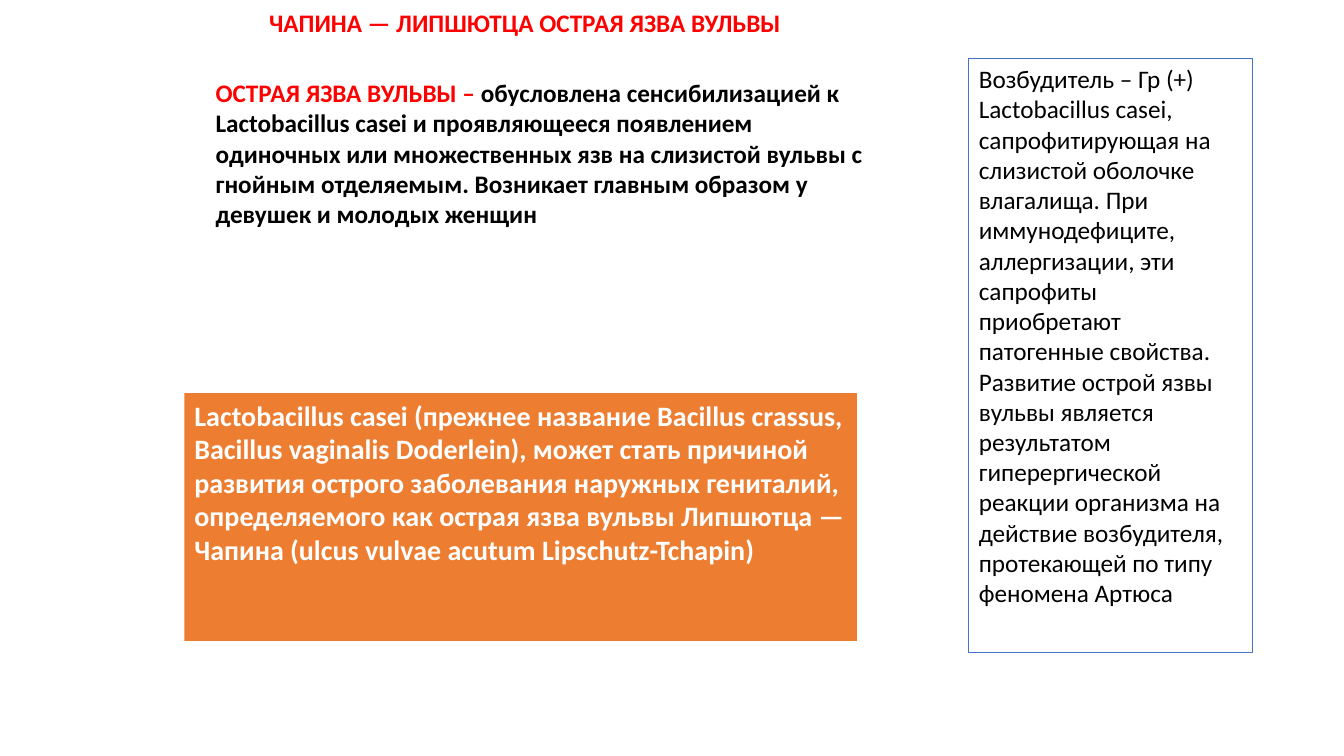
from dataclasses import dataclass

from pptx import Presentation
from pptx.dml.color import RGBColor
from pptx.enum import shapes, text
from pptx.util import Inches, Pt


@dataclass(frozen=True)
class Theme:
    font: str = "Calibri"
    body_size: int = 18
    callout_size: int = 20
    accent: str = "FF0000"
    dark: str = "000000"
    light: str = "FFFFFF"
    callout_fill: str = "ED7D31"
    border: str = "4472C4"
    border_width: float = 0.75


THEME = Theme()


def add_text(paragraph, content, size=THEME.body_size, color=THEME.dark, bold=False):
    run = paragraph.add_run()
    run.text = content
    run.font.name = THEME.font
    run.font.size = Pt(size)
    run.font.bold = bold
    run.font.color.rgb = RGBColor.from_string(color)


def start_text(shape):
    frame = shape.text_frame
    frame.word_wrap = True
    frame.auto_size = text.MSO_AUTO_SIZE.NONE
    frame.vertical_anchor = text.MSO_ANCHOR.TOP
    paragraph = frame.paragraphs[0]
    paragraph.alignment = text.PP_ALIGN.LEFT
    return paragraph


def add_text_area(slide, box):
    return start_text(slide.shapes.add_textbox(*map(Inches, box)))


def add_panel(slide, box, fill=None, border=None):
    shape = slide.shapes.add_shape(shapes.MSO_SHAPE.RECTANGLE, *map(Inches, box))
    shape.shadow.inherit = False
    if fill:
        shape.fill.solid()
        shape.fill.fore_color.rgb = RGBColor.from_string(fill)
    else:
        shape.fill.background()
    if border:
        shape.line.color.rgb = RGBColor.from_string(border)
        shape.line.width = Pt(THEME.border_width)
    else:
        shape.line.fill.background()
    return start_text(shape)


def add_title(slide, box):
    paragraph = add_text_area(slide, box)
    add_text(paragraph, "ЧАПИНА — ЛИПШЮТЦА ОСТРАЯ ЯЗВА ВУЛЬВЫ\u00a0", color=THEME.accent, bold=True)


def add_definition(slide, box):
    paragraph = add_text_area(slide, box)
    add_text(paragraph, "ОСТРАЯ ЯЗВА ВУЛЬВЫ – ", color=THEME.accent, bold=True)
    add_text(
        paragraph,
        "обусловлена сенсибилизацией к Lactobacillus casei и проявляющееся "
        "появлением одиночных или множественных язв на слизистой вульвы с "
        "гнойным отделяемым. Возникает главным образом у девушек и молодых женщин",
        bold=True,
    )


def add_pathogen_panel(slide, box):
    paragraph = add_panel(slide, box, border=THEME.border)
    add_text(
        paragraph,
        "Возбудитель – Гр (+) Lactobacillus casei, сапрофитирующая на слизистой "
        "оболочке влагалища. При иммунодефиците, аллергизации, эти сапрофиты "
        "приобретают патогенные свойства. Развитие острой язвы вульвы является "
        "результатом гиперергической реакции организма на действие возбудителя, "
        "протекающей по типу феномена Артюса",
    )


def add_callout(slide, box):
    paragraph = add_panel(slide, box, fill=THEME.callout_fill)
    add_text(
        paragraph,
        "Lactobacillus casei (прежнее название Bacillus crassus, Bacillus "
        "vaginalis Doderlein), может стать причиной развития острого заболевания "
        "наружных гениталий, определяемого как острая язва вульвы Липшютца — "
        "Чапина (ulcus vulvae acutum Lipschutz-Tchapin)",
        size=THEME.callout_size,
        color=THEME.light,
        bold=True,
    )


def main():
    presentation = Presentation()
    presentation.slide_width = Inches(13.33)
    presentation.slide_height = Inches(7.5)
    slide = presentation.slides.add_slide(presentation.slide_layouts[6])
    add_title(slide, (2.57, 0.02, 8.19, 0.4))
    add_pathogen_panel(slide, (9.61, 0.58, 2.81, 5.89))
    add_callout(slide, (1.83, 3.9, 6.67, 2.46))
    add_definition(slide, (2.04, 0.72, 6.67, 1.92))
    presentation.save("out.pptx")


if __name__ == "__main__":
    main()
